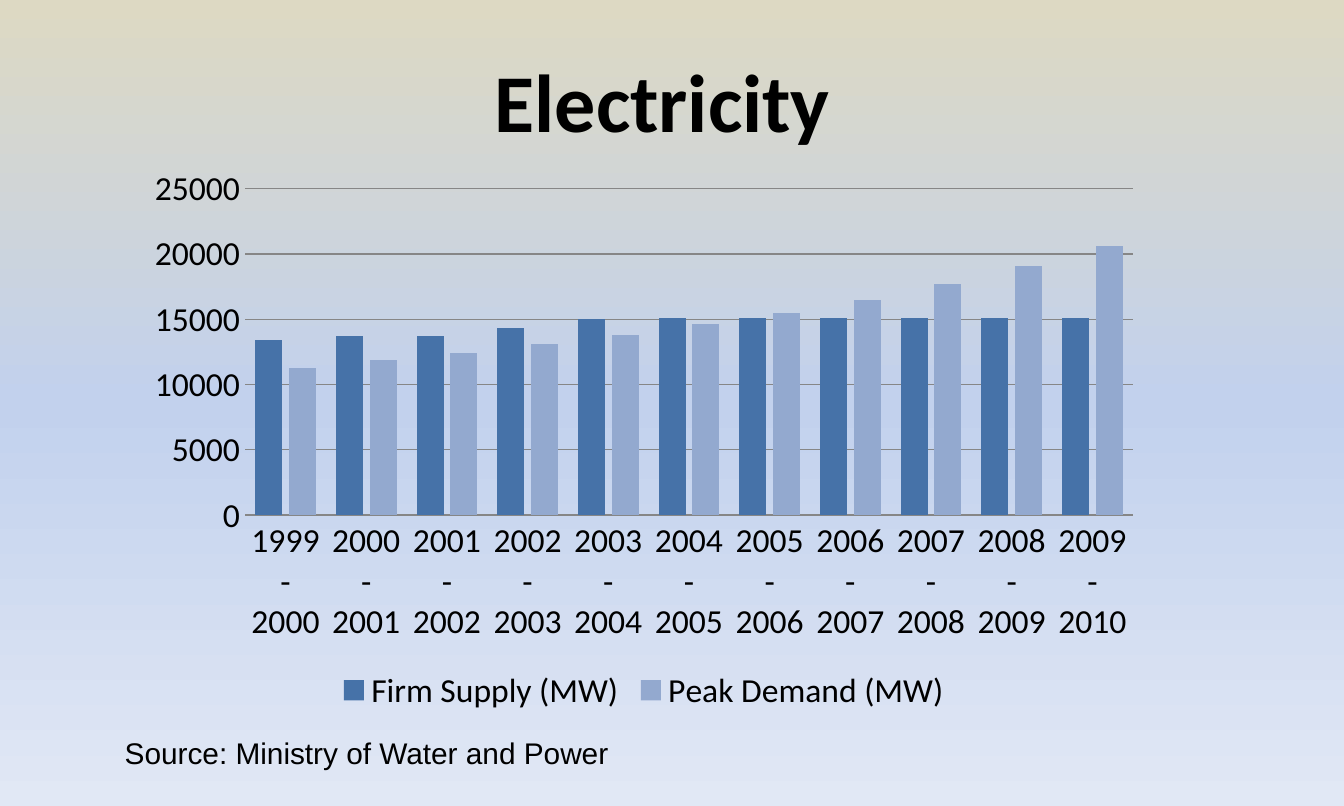
import copy
from dataclasses import dataclass

import pptx
import pptx.chart.data
import pptx.dml.color
import pptx.enum.chart
import pptx.enum.text
import pptx.oxml
import pptx.oxml.ns
import pptx.util

Inches = pptx.util.Inches
Pt = pptx.util.Pt


@dataclass(frozen=True)
class Theme:
    background: tuple = ((0, "DDD9C3"), (0.5, "C2D1ED"), (1, "E1E8F5"))
    text: str = "000000"
    grid: str = "868686"
    firm_supply: str = "4672A8"
    peak_demand: str = "93A9CF"
    heading_font: str = "Calibri"
    source_font: str = "Arial"
    title_size: int = 44
    chart_size: int = 18
    source_size: int = 16


theme = Theme()


def rgb(code):
    return pptx.dml.color.RGBColor.from_string(code)


def add_text(text, left, top, width, height, *, font, size, bold=False, wrap=True,
             align=pptx.enum.text.PP_ALIGN.LEFT,
             anchor=pptx.enum.text.MSO_ANCHOR.TOP, first_indent=0):
    box = slide.shapes.add_textbox(Inches(left), Inches(top), Inches(width), Inches(height))
    frame = box.text_frame
    frame.word_wrap = wrap
    frame.vertical_anchor = anchor
    paragraph = frame.paragraphs[0]
    paragraph.alignment = align
    if first_indent:
        properties = paragraph._p.get_or_add_pPr()
        properties.set("marL", "0")
        properties.set("indent", str(Inches(first_indent)))
    run = paragraph.add_run()
    run.text = text
    run.font.name = font
    run.font.size = Pt(size)
    run.font.bold = bold
    run.font.color.rgb = rgb(theme.text)


presentation = pptx.Presentation()
presentation.slide_width = Inches(10)
presentation.slide_height = Inches(6)
slide = presentation.slides.add_slide(presentation.slide_layouts[6])

# Background gradient, running from top to bottom
backdrop = slide.background.fill
backdrop.gradient()
backdrop.gradient_angle = 270
stop_list = slide._element.find(".//" + pptx.oxml.ns.qn("a:gsLst"))
stop_list.append(copy.deepcopy(stop_list[-1]))
for stop, (position, color) in zip(backdrop.gradient_stops, theme.background):
    stop.position = position
    stop.color.rgb = rgb(color)

add_text("Electricity ", 0.5, 0.24, 9, 1, font=theme.heading_font,
         size=theme.title_size, bold=True, align=pptx.enum.text.PP_ALIGN.CENTER,
         anchor=pptx.enum.text.MSO_ANCHOR.MIDDLE)

# Supply and demand by fiscal year
power = pptx.chart.data.CategoryChartData()
power.categories = [f"{year}-{year + 1}" for year in range(1999, 2010)]
power.add_series("Firm Supply (MW)", [13400, 13700, 13700, 14300, 15000, 15100,
                                      15100, 15100, 15100, 15100, 15100])
power.add_series("Peak Demand (MW)", [11300, 11900, 12400, 13100, 13800, 14600,
                                      15500, 16500, 17700, 19100, 20600])
chart = slide.shapes.add_chart(
    pptx.enum.chart.XL_CHART_TYPE.COLUMN_CLUSTERED,
    Inches(1), Inches(1.17), Inches(7.58), Inches(4.17), power).chart
chart.has_title = False
chart.font.name = theme.heading_font
chart.font.size = Pt(theme.chart_size)
chart.font.color.rgb = rgb(theme.text)
chart.has_legend = True
chart.legend.position = pptx.enum.chart.XL_LEGEND_POSITION.BOTTOM
chart.legend.include_in_layout = False

columns = chart.plots[0]
columns.vary_by_categories = False
columns.gap_width = 75
columns.overlap = -25
for series, color in zip(columns.series, (theme.firm_supply, theme.peak_demand)):
    series.format.fill.solid()
    series.format.fill.fore_color.rgb = rgb(color)
    series.invert_if_negative = False

years = chart.category_axis
megawatts = chart.value_axis
for axis in (years, megawatts):
    axis.major_tick_mark = pptx.enum.chart.XL_TICK_MARK.NONE
    axis.minor_tick_mark = pptx.enum.chart.XL_TICK_MARK.NONE
megawatts.minimum_scale = 0
megawatts.maximum_scale = 25000
megawatts.major_unit = 5000
megawatts.has_major_gridlines = True
megawatts.format.line.fill.background()
for line in (years.format.line, megawatts.major_gridlines.format.line):
    line.color.rgb = rgb(theme.grid)
    line.width = Pt(0.75)

add_text("Source: Ministry of Water and Power", 0.33, 5.42, 4.36, 0.37,
         font=theme.source_font, size=theme.source_size, wrap=False, first_indent=0.5)

presentation.save("out.pptx")
